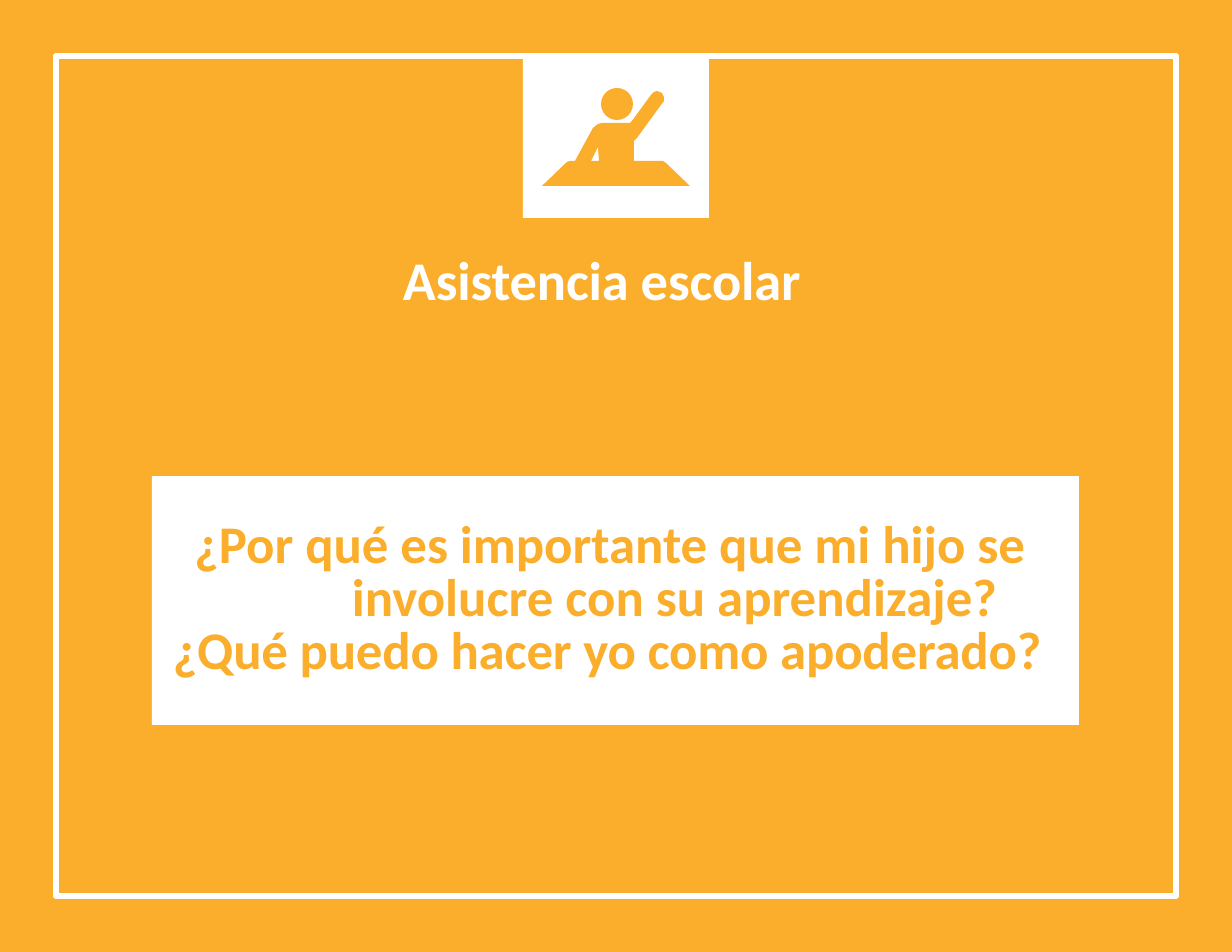
from dataclasses import dataclass, field

from pptx import Presentation
from pptx.dml.color import RGBColor
from pptx.enum.shapes import MSO_SHAPE as Shape
from pptx.enum.text import MSO_ANCHOR as Anchor, PP_ALIGN as Align
from pptx.util import Emu, Pt

EMU_PER_PX = 914400 / 112
ORANGE, WHITE = "FBAE2B", "FFFFFF"


@dataclass
class Panel:
    x: int
    y: int
    w: int
    h: int
    fill: str | None = None
    line: str | None = None
    kind: Shape = Shape.RECTANGLE


@dataclass
class Para:
    text: str
    size: int
    color: str
    spacing: int = 0
    indents: dict[str, int] = field(default_factory=dict)
    fmt: dict = field(default_factory=dict)


def px(n: int) -> Emu:
    return Emu(round(n * EMU_PER_PX))


def rgb(color: str) -> RGBColor:
    return RGBColor.from_string(color)


def paint(sp, fill: str | None, line: str | None = None):
    sp.shadow.inherit = False
    if fill:
        sp.fill.solid()
        sp.fill.fore_color.rgb = rgb(fill)
    else:
        sp.fill.background()
    if line:
        sp.line.color.rgb = rgb(line)
        sp.line.width = Pt(4)
    else:
        sp.line.fill.background()
    return sp


def add_panel(shapes, panel: Panel):
    box = map(px, (panel.x, panel.y, panel.w, panel.h))
    return paint(shapes.add_shape(panel.kind, *box), panel.fill, panel.line)


def add_outline(shapes, contours: list[list[tuple[int, int]]], fill: str):
    start, *rest = contours[0]
    fb = shapes.build_freeform(*start, scale=EMU_PER_PX)
    fb.add_line_segments(rest)
    for first, *others in contours[1:]:
        fb.move_to(*first)
        fb.add_line_segments(others)
    return paint(fb.convert_to_shape(), fill)


def write(tf, paras: list[Para], inset: int, anchor: Anchor) -> None:
    frame = {"word_wrap": True, "vertical_anchor": anchor, "margin_left": 0,
             "margin_right": 0, "margin_top": px(inset), "margin_bottom": 0}
    if anchor == Anchor.MIDDLE:
        frame["margin_bottom"] = px(inset)
    for name, value in frame.items():
        setattr(tf, name, value)
    for i, para in enumerate(paras):
        p = tf.add_paragraph() if i else tf.paragraphs[0]
        for name, value in para.fmt.items():
            setattr(p, name, value)
        for name, value in para.indents.items():
            p._p.get_or_add_pPr().set(name, str(px(value)))
        r = p.add_run()
        r.text = para.text
        for name, value in {"name": "Calibri", "size": Pt(para.size), "bold": True}.items():
            setattr(r.font, name, value)
        r.font.color.rgb = rgb(para.color)
        r._r.get_or_add_rPr().set("spc", str(para.spacing))


BACKGROUND = Panel(0, 0, 1232, 952, fill=ORANGE)
FRAME = Panel(56, 56, 1120, 840, line=WHITE)
BADGE = Panel(523, 56, 186, 162, fill=WHITE)
HEAD = Panel(601, 88, 32, 32, fill=ORANGE, kind=Shape.OVAL)
QUESTIONS = Panel(152, 476, 927, 249, fill=WHITE)

PUPIL_AT_DESK = [
    (542, 186), (567, 162), (570, 161), (575, 161), (593, 128), (598, 124),
    (602, 123), (630, 123), (632, 121), (651, 95), (654, 92), (657, 91),
    (662, 93), (664, 97), (664, 101), (661, 105), (637, 138), (634, 141),
    (634, 161), (663, 161), (666, 163), (690, 186),
]
ARM_GAP = [(591, 161), (598, 147), (599, 161)]

TITLE = Para("Asistencia escolar", 35, WHITE, -10, {"marL": 1},
             {"space_before": Pt(1), "alignment": Align.LEFT})
QUESTION_TEXT = [
    Para("¿Por qué es importante que mi hijo se involucre con su aprendizaje?",
         34, ORANGE, 0, {"marL": 132, "indent": -129, "marR": 14},
         {"alignment": Align.CENTER, "line_spacing": Pt(34)}),
    Para("¿Qué puedo hacer yo como apoderado?", 34, ORANGE, -10, {"marL": 21},
         {"alignment": Align.LEFT, "line_spacing": Pt(34)}),
]


def main() -> None:
    prs = Presentation()
    prs.slide_width, prs.slide_height = px(1232), px(952)
    s = prs.slides.add_slide(prs.slide_layouts[6])

    for panel in (BACKGROUND, FRAME):
        add_panel(s.shapes, panel)

    title = s.shapes.add_textbox(*map(px, (402, 245, 428, 68)))
    write(title.text_frame, [TITLE], 1, Anchor.TOP)

    icon = s.shapes.add_group_shape()
    for panel in (BADGE, HEAD):
        add_panel(icon.shapes, panel)
    add_outline(icon.shapes, [PUPIL_AT_DESK, ARM_GAP], ORANGE)

    sp = add_panel(s.shapes, QUESTIONS)
    write(sp.text_frame, QUESTION_TEXT, 44, Anchor.MIDDLE)

    prs.save("out.pptx")


if __name__ == "__main__":
    main()
